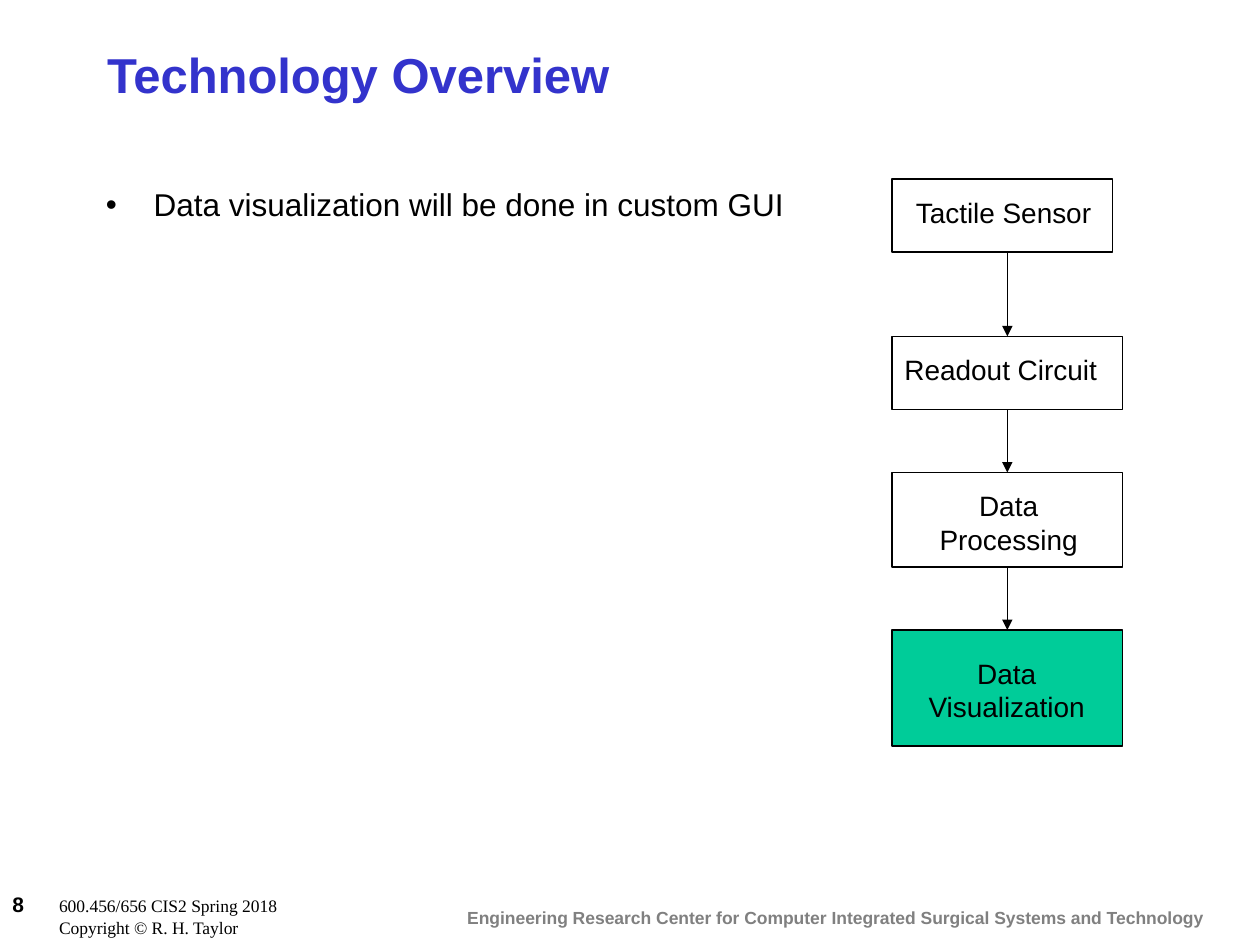
import pptx
import pptx.dml.color
import pptx.enum.shapes
import pptx.enum.text
import pptx.oxml.ns
import pptx.util
from dataclasses import dataclass
from lxml import etree

Inches = pptx.util.Inches
Pt = pptx.util.Pt
RGB = pptx.dml.color.RGBColor
ALIGN = pptx.enum.text.PP_ALIGN
qn = pptx.oxml.ns.qn


@dataclass(frozen=True)
class Theme:
    sans: str = "Arial"
    serif: str = "Times New Roman"
    title: RGB = RGB(0x33, 0x33, 0xCC)
    ink: RGB = RGB(0, 0, 0)
    paper: RGB = RGB(0xFF, 0xFF, 0xFF)
    muted: RGB = RGB(0x80, 0x80, 0x80)
    current: RGB = RGB(0x00, 0xCC, 0x99)
    title_size: int = 28
    body_size: int = 18
    label_size: int = 16
    number_size: int = 12
    footer_size: int = 10
    line_width: float = 0.75


theme = Theme()


def style(paragraph, size, color=theme.ink, bold=False, name=theme.sans):
    for run in paragraph.runs:
        run.font.name = name
        run.font.size = Pt(size)
        run.font.bold = bold
        run.font.color.rgb = color


def hang(paragraph, indent):
    """Give the paragraph a hanging indent and return its properties element."""
    properties = paragraph._p.get_or_add_pPr()
    properties.set("marL", str(Inches(indent)))
    properties.set("indent", str(-Inches(indent)))
    return properties


prs = pptx.Presentation()
prs.slide_width, prs.slide_height = Inches(10), Inches(7.5)
slide = prs.slides.add_slide(prs.slide_layouts[1])
shapes = slide.shapes

# Footer
center_name = shapes.add_textbox(Inches(3.61), Inches(7.15), Inches(6.06), Inches(0.27))
center_name.text_frame.word_wrap = False
center_name.text_frame.text = (
    "Engineering Research Center for Computer Integrated Surgical Systems and Technology")
style(center_name.text_frame.paragraphs[0], theme.footer_size, theme.muted, bold=True)

course = shapes.add_textbox(Inches(0), Inches(7.03), Inches(4.08), Inches(0.47))
course.text_frame.word_wrap = True
course.text_frame.text = "8\t\n\tCopyright © R. H. Taylor"
course_line, copyright_line = course.text_frame.paragraphs
course_line.add_run().text = "600.456/656 CIS2 Spring 2018"
for line in (course_line, copyright_line):
    hang(line, 0.37)
    style(line, theme.footer_size, name=theme.serif)
page_number = course_line.runs[0].font
page_number.name, page_number.size, page_number.bold = theme.sans, Pt(theme.number_size), True

# Title and bullet
title = shapes.title
title.left, title.top, title.width, title.height = map(Inches, (0.75, 0.25, 8.5, 0.67))
title.text_frame.text = "Technology Overview"
title.text_frame.vertical_anchor = pptx.enum.text.MSO_ANCHOR.MIDDLE
title.text_frame.paragraphs[0].alignment = ALIGN.LEFT
style(title.text_frame.paragraphs[0], theme.title_size, theme.title, bold=True)

body = slide.placeholders[1]
body.left, body.top, body.width, body.height = map(Inches, (0.74, 1.42, 5.67, 2.44))
body.text_frame.text = "Data visualization will be done in custom GUI"
body.text_frame.auto_size = pptx.enum.text.MSO_AUTO_SIZE.NONE
bullet = body.text_frame.paragraphs[0]
etree.SubElement(hang(bullet, 0.38), qn("a:buChar")).set("char", "•")
bullet.alignment = ALIGN.JUSTIFY
bullet.space_before = Pt(0)
style(bullet, theme.body_size)

# Flow: text, box (top, width, height), label (left, top, width, height), alignment, fill
stages = [
    ("Tactile Sensor", (1.42, 1.75, 0.58), (7.17, 1.5, 1.75, 0.37), ALIGN.LEFT, theme.paper),
    ("Readout Circuit", (2.67, 1.83, 0.58), (7.08, 2.75, 1.75, 0.37), ALIGN.LEFT, theme.paper),
    ("Data\nProcessing", (3.75, 1.83, 0.75), (7.17, 3.83, 1.67, 0.64), ALIGN.CENTER, theme.paper),
    ("Data Visualization", (5, 1.83, 0.92), (7.14, 5.16, 1.7, 0.64), ALIGN.CENTER, theme.current),
]
boxes = []
for text, (top, width, height), label_area, alignment, fill in stages:
    box = shapes.add_shape(pptx.enum.shapes.MSO_SHAPE.RECTANGLE,
                           Inches(7.08), Inches(top), Inches(width), Inches(height))
    box.shadow.inherit = False
    box.fill.solid()
    box.fill.fore_color.rgb = fill
    box.line.color.rgb = theme.ink
    box.line.width = Pt(theme.line_width)
    boxes.append(box)

    label = shapes.add_textbox(*map(Inches, label_area))
    label.text_frame.word_wrap = True
    label.text_frame.text = text
    for paragraph in label.text_frame.paragraphs:
        paragraph.alignment = alignment
        style(paragraph, theme.label_size)

for upper, lower in zip(boxes, boxes[1:]):
    center = lower.left + lower.width // 2
    arrow = shapes.add_connector(pptx.enum.shapes.MSO_CONNECTOR.STRAIGHT,
                                 center, upper.top + upper.height, center, lower.top)
    # The narrower first box is not centred over the arrow, so that start stays free.
    if upper.width == lower.width:
        arrow.begin_connect(upper, 2)
    arrow.end_connect(lower, 0)
    arrow.line.color.rgb = theme.ink
    arrow.line.width = Pt(theme.line_width)
    etree.SubElement(arrow.line._get_or_add_ln(), qn("a:tailEnd")).set("type", "triangle")
    etree.SubElement(arrow._element.spPr, qn("a:effectLst"))

prs.save("out.pptx")
